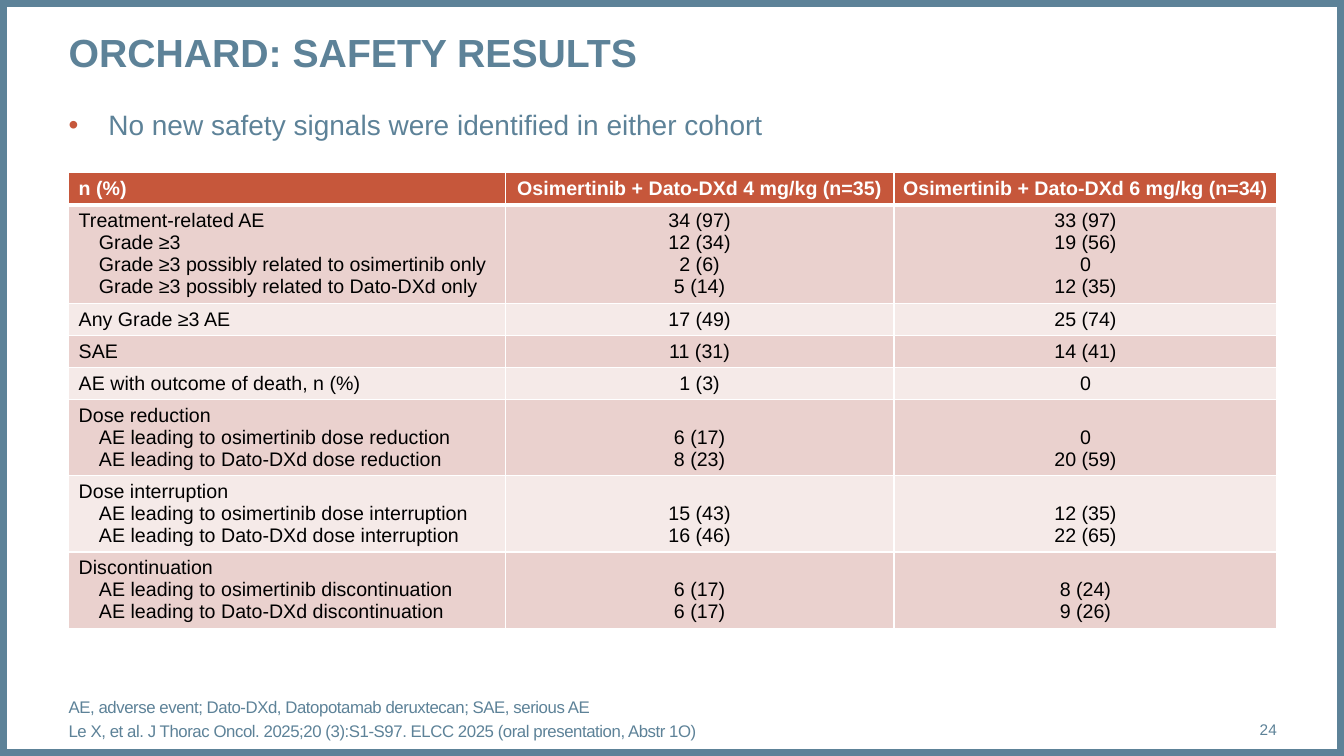
from dataclasses import dataclass

from lxml.etree import SubElement
from pptx import Presentation
from pptx.dml.color import RGBColor
from pptx.enum.shapes import MSO_SHAPE as Shape
from pptx.enum.text import MSO_ANCHOR as Anchor, MSO_AUTO_SIZE as AutoSize, PP_ALIGN as Align
from pptx.oxml.ns import qn
from pptx.util import Cm, Pt

COLORS = {
    "slate": "5D8298",
    "rust": "C6573B",
    "band_dark": "EAD1CE",
    "band_light": "F5EAE8",
    "white": "FFFFFF",
    "black": "000000",
}
FONT = "Arial"
LEFT, WIDTH = 1.73, 30.45
COLUMN_WIDTHS = (11.0, 9.8, 9.65)
LINE_HEIGHT, ROW_PADDING = 0.56, 0.24


@dataclass
class TextStyle:
    size: float
    color: str
    bold: bool = False
    align: Align = Align.LEFT


@dataclass
class SafetyRow:
    labels: list[str]  # the first label is the heading, the others are indented
    lower_dose: list[str]
    higher_dose: list[str]

    @property
    def columns(self) -> tuple[list[str], list[str], list[str]]:
        return self.labels, self.lower_dose, self.higher_dose


HEADER = SafetyRow(["n (%)"], ["Osimertinib + Dato-DXd 4 mg/kg (n=35)"],
                   ["Osimertinib + Dato-DXd 6 mg/kg (n=34)"])
SAFETY_ROWS = [
    SafetyRow(["Treatment-related AE", "Grade ≥3",
               "Grade ≥3 possibly related to osimertinib only",
               "Grade ≥3 possibly related to Dato-DXd only"],
              ["34 (97)", "12 (34)", "2 (6)", "5 (14)"],
              ["33 (97)", "19 (56)", "0", "12 (35)"]),
    SafetyRow(["Any Grade ≥3 AE"], ["17 (49)"], ["25 (74)"]),
    SafetyRow(["SAE"], ["11 (31)"], ["14 (41)"]),
    SafetyRow(["AE with outcome of death, n (%)"], ["1 (3)"], ["0"]),
    SafetyRow(["Dose reduction", "AE leading to osimertinib dose reduction",
               "AE leading to Dato-DXd dose reduction"],
              ["6 (17)", "8 (23)"], ["0", "20 (59)"]),
    SafetyRow(["Dose interruption", "AE leading to osimertinib dose interruption",
               "AE leading to Dato-DXd dose interruption"],
              ["15 (43)", "16 (46)"], ["12 (35)", "22 (65)"]),
    SafetyRow(["Discontinuation", "AE leading to osimertinib discontinuation",
               "AE leading to Dato-DXd discontinuation"],
              ["6 (17)", "6 (17)"], ["8 (24)", "9 (26)"]),
]


def rgb(name: str) -> RGBColor:
    return RGBColor.from_string(COLORS[name])


def write(text_frame, lines: list[str], style: TextStyle) -> None:
    text_frame.text = "\n".join(lines)
    for paragraph in text_frame.paragraphs:
        paragraph.alignment = style.align
        for run in paragraph.runs:
            run.font.name = FONT
            run.font.size = Pt(style.size)
            run.font.bold = style.bold
            run.font.color.rgb = rgb(style.color)


def fill_box(shape, lines: list[str], style: TextStyle, anchor: Anchor) -> None:
    text_frame = shape.text_frame
    text_frame.margin_left = text_frame.margin_right = 0
    text_frame.margin_top = text_frame.margin_bottom = 0
    text_frame.word_wrap = True
    text_frame.auto_size = AutoSize.NONE
    text_frame.vertical_anchor = anchor
    write(text_frame, lines, style)


def add_text(slide, left: float, top: float, width: float, height: float,
             lines: list[str], style: TextStyle, anchor: Anchor):
    box = slide.shapes.add_textbox(Cm(left), Cm(top), Cm(width), Cm(height))
    fill_box(box, lines, style, anchor)
    return box.text_frame


def add_bullet(paragraph, character: str, color: str, indent: float) -> None:
    properties = paragraph._p.get_or_add_pPr()
    properties.set("marL", str(Cm(indent)))
    properties.set("indent", str(-Cm(indent)))
    bullet_color = SubElement(properties, qn("a:buClr"))
    SubElement(bullet_color, qn("a:srgbClr"), val=COLORS[color])
    SubElement(properties, qn("a:buFont"), typeface=FONT)
    SubElement(properties, qn("a:buChar"), char=character)


def set_borders(cell, top: float, bottom: float) -> None:
    properties = cell._tc.get_or_add_tcPr()
    for side, weight in (("L", 1), ("R", 1), ("T", top), ("B", bottom)):
        line = SubElement(properties, qn(f"a:ln{side}"), w=str(Pt(weight)))
        fill = SubElement(line, qn("a:solidFill"))
        SubElement(fill, qn("a:srgbClr"), val=COLORS["white"])


def add_safety_table(slide, top: float) -> None:
    rows = [HEADER, *SAFETY_ROWS]
    heights = [ROW_PADDING + LINE_HEIGHT * len(row.labels) for row in rows]
    table = slide.shapes.add_table(len(rows), len(COLUMN_WIDTHS), Cm(LEFT), Cm(top),
                                   Cm(WIDTH), Cm(sum(heights))).table
    for column, width in zip(table.columns, COLUMN_WIDTHS):
        column.width = Cm(width)
    for index, (row, height) in enumerate(zip(rows, heights)):
        table.rows[index].height = Cm(height)
        is_header = index == 0
        band = "rust" if is_header else "band_dark" if index % 2 else "band_light"
        for position, lines in enumerate(row.columns):
            cell = table.cell(index, position)
            set_borders(cell, top=3 if index == 1 else 1, bottom=3 if is_header else 1)
            cell.fill.solid()
            cell.fill.fore_color.rgb = rgb(band)
            # Values sit at the bottom, level with the indented labels
            cell.vertical_anchor = Anchor.BOTTOM if position else Anchor.TOP
            if position:
                cell.margin_left = cell.margin_right = Cm(0.05)
            write(cell.text_frame, lines,
                  TextStyle(14, "white" if is_header else "black", is_header,
                            Align.CENTER if position else Align.LEFT))
        for paragraph in table.cell(index, 0).text_frame.paragraphs[1:]:
            paragraph._p.get_or_add_pPr().set("indent", str(Cm(0.51)))


def main() -> None:
    presentation = Presentation()
    presentation.slide_width, presentation.slide_height = Cm(33.87), Cm(19.05)
    slide = presentation.slides.add_slide(presentation.slide_layouts[5])

    # Frame around the slide
    frame = slide.shapes.add_shape(Shape.RECTANGLE, 0, 0, presentation.slide_width,
                                   presentation.slide_height)
    frame.shadow.inherit = False
    frame.fill.background()
    frame.line.color.rgb = rgb("slate")
    frame.line.width = Pt(10)

    # Title
    title = slide.shapes.title
    title.left, title.top, title.width, title.height = Cm(LEFT), Cm(0.71), Cm(WIDTH), Cm(1.8)
    fill_box(title, ["ORCHARD: SAFETY RESULTS"], TextStyle(28, "slate", True), Anchor.TOP)

    # Key message
    message = add_text(slide, LEFT, 2.72, WIDTH, 1.2,
                       ["No new safety signals were identified in either cohort"],
                       TextStyle(20, "slate"), Anchor.TOP)
    add_bullet(message.paragraphs[0], "•", "rust", 1.0)

    # Safety table
    add_safety_table(slide, 4.35)

    # Abbreviations and reference
    notes = add_text(slide, LEFT, 17.65, 28.27, 1.02, [
        "AE, adverse event; Dato-DXd, Datopotamab deruxtecan; SAE, serious AE",
        "Le X, et al. J Thorac Oncol. 2025;20 (3):S1-S97. ELCC 2025 (oral presentation, Abstr 1O)",
    ], TextStyle(12, "slate"), Anchor.BOTTOM)
    notes.paragraphs[1].space_before = Pt(3)
    for paragraph in notes.paragraphs:
        for run in paragraph.runs:
            run._r.get_or_add_rPr().set("spc", "-30")

    # Slide number
    add_text(slide, 30.0, 17.86, 2.18, 1.02, ["24"],
             TextStyle(11, "slate", align=Align.RIGHT), Anchor.MIDDLE)

    presentation.save("out.pptx")


if __name__ == "__main__":
    main()
